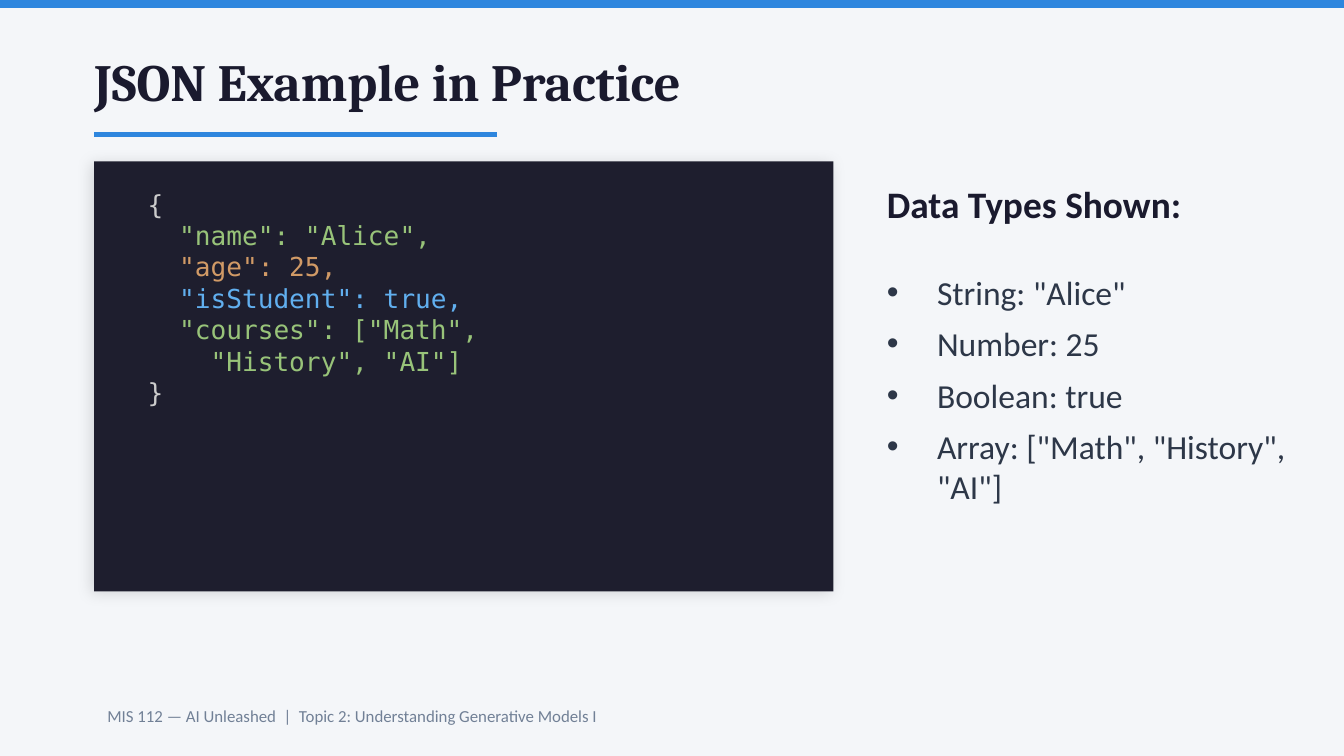
from dataclasses import dataclass

from lxml.etree import SubElement
from pptx import Presentation
from pptx.dml.color import RGBColor
from pptx.enum.shapes import MSO_CONNECTOR as Connector, MSO_SHAPE as Preset
from pptx.enum.text import MSO_ANCHOR as Anchor
from pptx.oxml.ns import qn
from pptx.util import Cm, Pt


@dataclass(frozen=True)
class Theme:
    background: str = "F4F6F9"
    accent: str = "2E86DE"
    ink: str = "1A1A2E"
    body: str = "2D3748"
    muted: str = "718096"
    panel: str = "1E1E2E"
    punctuation: str = "CCCCCC"
    string: str = "98C379"
    number: str = "D19A66"
    boolean: str = "61AFEF"
    title_size: int = 28
    heading_size: int = 20
    body_size: int = 18
    code_size: int = 14
    footer_size: int = 9
    title_font: str = "Cambria"
    body_font: str = "Calibri"
    code_font: str = "DejaVu Sans Mono"


def apply_format(target, values):
    for name, value in values.items():
        setattr(target, name, value)


class Page:
    def __init__(self, deck, theme):
        self.theme = theme
        self.slide = deck.slides.add_slide(deck.slide_layouts[6])
        self.paint(self.slide.background.fill, theme.background)

    def paint(self, fill, color):
        fill.solid()
        fill.fore_color.rgb = RGBColor.from_string(color)

    def bar(self, left, top, width, height, color):
        shape = self.slide.shapes.add_shape(
            Preset.RECTANGLE, Cm(left), Cm(top), Cm(width), Cm(height))
        self.paint(shape.fill, color)
        shape.line.fill.background()
        shape.shadow.inherit = False
        return shape

    def soft_shadow(self, shape):
        effects = shape._element.spPr.find(qn("a:effectLst"))
        shadow = SubElement(effects, qn("a:outerShdw"), blurRad=str(Pt(8)),
                            dist=str(Pt(2)), dir=str(135 * 60000),
                            algn="bl", rotWithShape="0")
        color = SubElement(shadow, qn("a:srgbClr"), val="000000")
        SubElement(color, qn("a:alpha"), val="12000")

    def rule(self, left, top, width, color, weight):
        line = self.slide.shapes.add_connector(
            Connector.STRAIGHT, Cm(left), Cm(top), Cm(left + width), Cm(top))
        self.paint(line.line.fill, color)
        line.line.width = Pt(weight)
        SubElement(line._element.spPr, qn("a:effectLst"))

    def box(self, left, top, width, height, **frame_format):
        frame = self.slide.shapes.add_textbox(
            Cm(left), Cm(top), Cm(width), Cm(height)).text_frame
        apply_format(frame, {"word_wrap": True, **frame_format})
        return frame

    def para(self, frame, text, font, size, color, bold=False, bullet=False, after=0):
        first = frame.paragraphs[0]
        para = frame.add_paragraph() if first.runs else first
        if bullet:
            properties = para._p.get_or_add_pPr()
            indent = Cm(0.95)
            properties.set("marL", str(indent))
            properties.set("indent", str(-indent))
            SubElement(properties, qn("a:buFont"), typeface="Arial")
            SubElement(properties, qn("a:buChar"), char="•")
        if after:
            para.space_after = Pt(after)
        span = para.add_run()
        span.text = text
        apply_format(span.font, {"name": font, "size": Pt(size), "bold": bold})
        span.font.color.rgb = RGBColor.from_string(color)


def build():
    theme = Theme()
    deck = Presentation()
    apply_format(deck, {"slide_width": Cm(25.4), "slide_height": Cm(14.29)})
    page = Page(deck, theme)
    margin, full_width = 1.78, 21.84

    page.bar(0, 0, 25.4, 0.15, theme.accent)
    no_insets = dict.fromkeys(
        ("margin_left", "margin_top", "margin_right", "margin_bottom"), 0)
    title = page.box(margin, 0.64, full_width, 1.78,
                     vertical_anchor=Anchor.MIDDLE, **no_insets)
    page.para(title, "JSON Example in Practice", theme.title_font,
              theme.title_size, theme.ink, bold=True)
    page.rule(margin, 2.54, 7.62, theme.accent, 2.5)

    page.soft_shadow(page.bar(margin, 3.05, 13.97, 8.13, theme.panel))
    code = page.box(2.54, 3.43, 12.7, 7.62)
    code_lines = [
        ('{', theme.punctuation),
        ('  "name": "Alice",', theme.string),
        ('  "age": 25,', theme.number),
        ('  "isStudent": true,', theme.boolean),
        ('  "courses": ["Math",', theme.string),
        ('    "History", "AI"]', theme.string),
        ('}', theme.punctuation),
    ]
    for text, color in code_lines:
        page.para(code, text, theme.code_font, theme.code_size, color)

    types = page.box(16.51, 3.3, 8.13, 8.13)
    page.para(types, "Data Types Shown:", theme.body_font, theme.heading_size,
              theme.ink, bold=True, after=24.4)
    examples = ['String: "Alice"', 'Number: 25', 'Boolean: true',
                'Array: ["Math", "History", "AI"]']
    for example in examples:
        page.para(types, example, theme.body_font, theme.body_size, theme.body,
                  bullet=True, after=0 if example == examples[-1] else 6)

    footer = page.box(margin, 13.08, full_width, 0.89, vertical_anchor=Anchor.MIDDLE)
    page.para(footer, "MIS 112 — AI Unleashed  |  Topic 2: Understanding Generative Models I",
              theme.body_font, theme.footer_size, theme.muted)
    deck.save("out.pptx")


if __name__ == "__main__":
    build()
